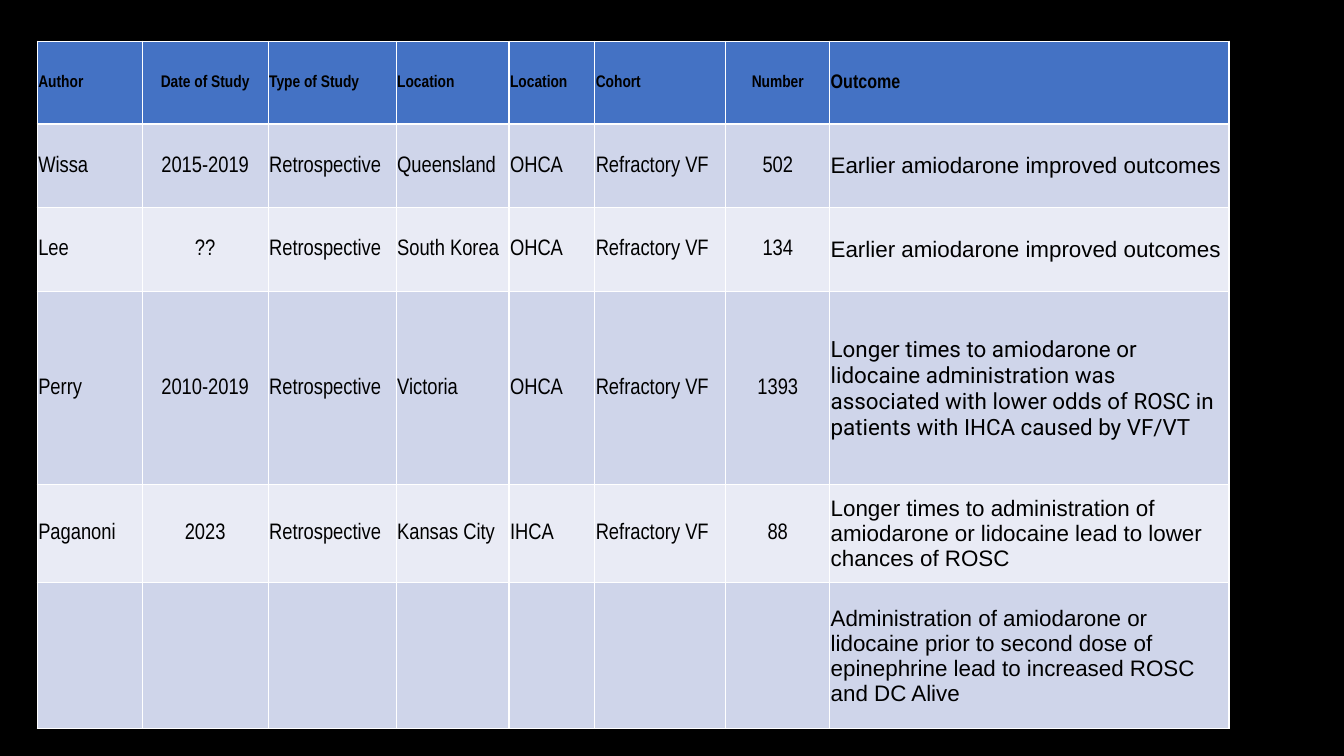
from dataclasses import dataclass

from pptx import Presentation
from pptx import util as u
from pptx.dml.color import RGBColor
from pptx.enum import text as t
from pptx.table import _Cell

BLACK = RGBColor(0x00, 0x00, 0x00)
HEADER_BLUE = RGBColor(0x44, 0x72, 0xC4)
BAND_DARK = RGBColor(0xCF, 0xD5, 0xEA)
BAND_LIGHT = RGBColor(0xE9, 0xEB, 0xF5)
NARROW = "Arial Narrow"


@dataclass(frozen=True)
class Column:
    heading: str
    width: float
    centred: bool = False
    heading_size: int = 12


@dataclass(frozen=True)
class Study:
    height: float
    values: tuple[str, ...]
    outcome: str
    outcome_font: str = "Arial"


COLUMNS = (
    Column("Author", 1.04),
    Column("Date of Study", 1.25, centred=True),
    Column("Type of Study", 1.27),
    Column("Location", 1.12),
    Column("Location", 0.85),
    Column("Cohort", 1.3),
    Column("Number", 1.03, centred=True),
    Column("Outcome", 3.96, heading_size=14),
)
HEADER_HEIGHT = 0.82
DESIGN = "Retrospective"
COHORT = "Refractory VF"
IMPROVED = "Earlier amiodarone improved outcomes"
STUDIES = (
    Study(0.83, ("Wissa", "2015-2019", DESIGN, "Queensland", "OHCA", COHORT, "502"), IMPROVED),
    Study(0.83, ("Lee", "??", DESIGN, "South Korea", "OHCA", COHORT, "134"), IMPROVED),
    Study(
        1.92,
        ("Perry", "2010-2019", DESIGN, "Victoria", "OHCA", COHORT, "1393"),
        "Longer times to amiodarone or lidocaine administration was associated "
        "with lower odds of ROSC in patients with IHCA caused by VF/VT",
        "Roboto",
    ),
    Study(
        0.97,
        ("Paganoni", "2023", DESIGN, "Kansas City", "IHCA", COHORT, "88"),
        "Longer times to administration of amiodarone or lidocaine lead to lower chances of ROSC",
    ),
    Study(
        1.45,
        ("",) * 7,
        "Administration of amiodarone or lidocaine prior to second dose of "
        "epinephrine lead to increased ROSC and DC Alive",
    ),
)


def fill_cell(cell: _Cell, words: str, column: Column, colour: RGBColor,
              size: int, font: str = NARROW, bold: bool = False) -> None:
    cell.fill.solid()
    cell.fill.fore_color.rgb = colour
    cell.vertical_anchor = t.MSO_ANCHOR.MIDDLE
    cell.margin_left = cell.margin_top = cell.margin_right = u.Inches(0.01)
    cell.margin_bottom = u.Inches(0)
    if not words:
        return
    para = cell.text_frame.paragraphs[0]
    para.text = words
    para.alignment = t.PP_ALIGN.CENTER if column.centred else t.PP_ALIGN.LEFT
    for span in para.runs:
        span.font.name = font
        span.font.size = u.Pt(size)
        span.font.bold = bold
        span.font.color.rgb = BLACK


def main() -> None:
    deck = Presentation()
    deck.slide_width = u.Inches(13.33)
    deck.slide_height = u.Inches(7.5)
    page = deck.slides.add_slide(deck.slide_layouts[6])
    page.background.fill.solid()
    page.background.fill.fore_color.rgb = BLACK

    heights = [HEADER_HEIGHT] + [study.height for study in STUDIES]
    widths = [column.width for column in COLUMNS]
    table = page.shapes.add_table(
        len(heights), len(widths), u.Inches(0.37), u.Inches(0.41),
        u.Inches(sum(widths)), u.Inches(sum(heights)),
    ).table
    for row, height in zip(table.rows, heights):
        row.height = u.Inches(height)

    for index, column in enumerate(COLUMNS):
        table.columns[index].width = u.Inches(column.width)
        fill_cell(table.cell(0, index), column.heading, column, HEADER_BLUE,
                  column.heading_size, bold=True)

    for number, study in enumerate(STUDIES, start=1):
        band = BAND_DARK if number % 2 else BAND_LIGHT
        for index, (column, words) in enumerate(zip(COLUMNS, study.values)):
            fill_cell(table.cell(number, index), words, column, band, 16)
        last = len(COLUMNS) - 1
        fill_cell(table.cell(number, last), study.outcome, COLUMNS[last], band,
                  16, study.outcome_font)

    deck.save("out.pptx")


if __name__ == "__main__":
    main()
